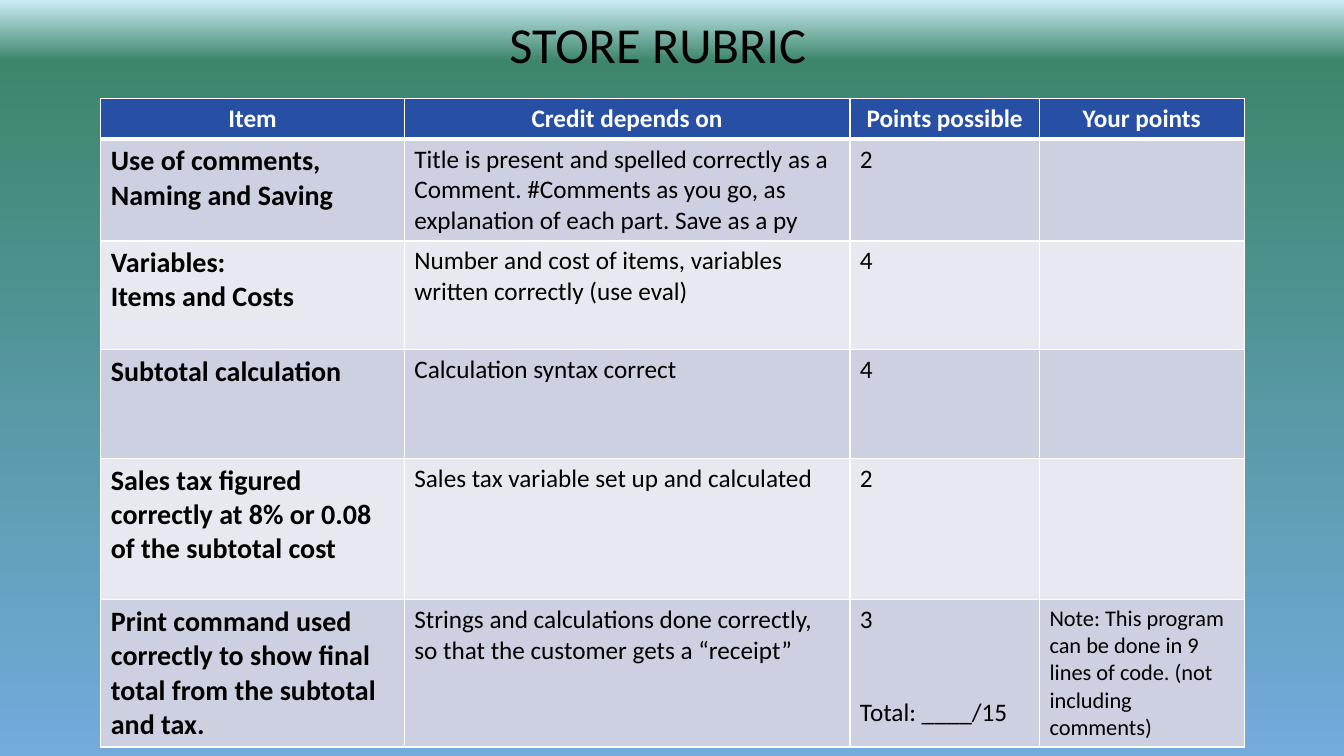
from copy import deepcopy
from lxml import etree
from pptx import Presentation
from pptx.dml.color import RGBColor
from pptx.enum import text
from pptx.oxml.ns import qn
from pptx.util import Inches, Pt

BLACK = RGBColor(0x00, 0x00, 0x00)
WHITE = RGBColor(0xFF, 0xFF, 0xFF)
HEADER = RGBColor(0x27, 0x4F, 0xA4)
BAND_DARK = RGBColor(0xCD, 0xD0, 0xE0)
BAND_LIGHT = RGBColor(0xE8, 0xE9, 0xF0)
SKY = RGBColor(0xCB, 0xEC, 0xF5)
GREEN = RGBColor(0x3D, 0x86, 0x6C)
BLUE = RGBColor(0x73, 0xAB, 0xDD)

COLUMN_WIDTHS = [3.01, 4.42, 1.88, 2.03]
ROW_HEIGHTS = [0.4, 1.01, 1.08, 1.08, 1.4, 1.46]
ROWS = [
    ["Item", "Credit depends on", "Points possible", "Your points"],
    ["Use of comments, Naming and Saving",
     "Title is present and spelled correctly as a Comment. #Comments as you go, "
     "as explanation of each part. Save as a py", "2", ""],
    ["Variables:\nItems and Costs",
     "Number and cost of items, variables written correctly (use eval)", "4", ""],
    ["Subtotal calculation", "Calculation syntax correct", "4", ""],
    ["Sales tax figured correctly at 8% or 0.08 of the subtotal cost",
     "Sales tax variable set up and calculated", "2", ""],
    ["Print command used correctly to show final total from the subtotal and tax.",
     "Strings and calculations done correctly, so that the customer gets a “receipt”",
     "3\nTotal: ____/15",
     "Note: This program can be done in 9 lines of code. (not including comments)"],
]


def add_run(p, content, size, color, bold=False):
    r = p.add_run()
    r.text = content
    r.font.name = "Calibri"
    r.font.size = Pt(size)
    r.font.bold = bold
    r.font.color.rgb = color


def add_border(cell, side, width):
    ln = etree.SubElement(cell._tc.get_or_add_tcPr(), qn("a:ln" + side), w=str(Pt(width)))
    fill = etree.SubElement(ln, qn("a:solidFill"))
    etree.SubElement(fill, qn("a:srgbClr"), val=str(WHITE))


prs = Presentation()
prs.slide_width = Inches(13.33)
prs.slide_height = Inches(7.5)
s = prs.slides.add_slide(prs.slide_layouts[6])

bg = s.background.fill
bg.gradient()
bg.gradient_angle = 270
stop_list = next(s._element.iter(qn("a:gsLst")))
stop_list.append(deepcopy(stop_list[-1]))
for stop, (position, color) in zip(bg.gradient_stops, [(0, SKY), (0.08, GREEN), (1, BLUE)]):
    stop.position = position
    stop.color.rgb = color

title = s.shapes.add_textbox(Inches(0.86), Inches(0), Inches(11.33), Inches(0.93))
tf = title.text_frame
tf.word_wrap = True
tf.vertical_anchor = text.MSO_ANCHOR.MIDDLE
p = tf.paragraphs[0]
p.alignment = text.PP_ALIGN.CENTER
p.line_spacing = 0.9
add_run(p, "STORE RUBRIC", 36, BLACK)

rubric = s.shapes.add_table(len(ROWS), len(COLUMN_WIDTHS), Inches(1), Inches(0.98),
                            Inches(sum(COLUMN_WIDTHS)), Inches(sum(ROW_HEIGHTS))).table
for column, width in zip(rubric.columns, COLUMN_WIDTHS):
    column.width = Inches(width)

for i, row in enumerate(ROWS):
    rubric.rows[i].height = Inches(ROW_HEIGHTS[i])
    is_header = i == 0
    for j, content in enumerate(row):
        cell = rubric.cell(i, j)
        add_border(cell, "L", 1)
        add_border(cell, "R", 1)
        add_border(cell, "T", 3 if i == 1 else 1)
        add_border(cell, "B", 3 if is_header else 1)
        cell.fill.solid()
        cell.fill.fore_color.rgb = HEADER if is_header else (BAND_LIGHT, BAND_DARK)[i % 2]
        size = 18 if is_header else (20, 18, 18, 16)[j]
        tf = cell.text_frame
        for k, line in enumerate(content.split("\n") if content else []):
            p = tf.add_paragraph() if k else tf.paragraphs[0]
            if is_header:
                p.alignment = text.PP_ALIGN.CENTER
            if line.startswith("Total"):
                p.space_before = Pt(44)
            add_run(p, line, size, WHITE if is_header else BLACK, is_header or j == 0)

prs.save("out.pptx")
